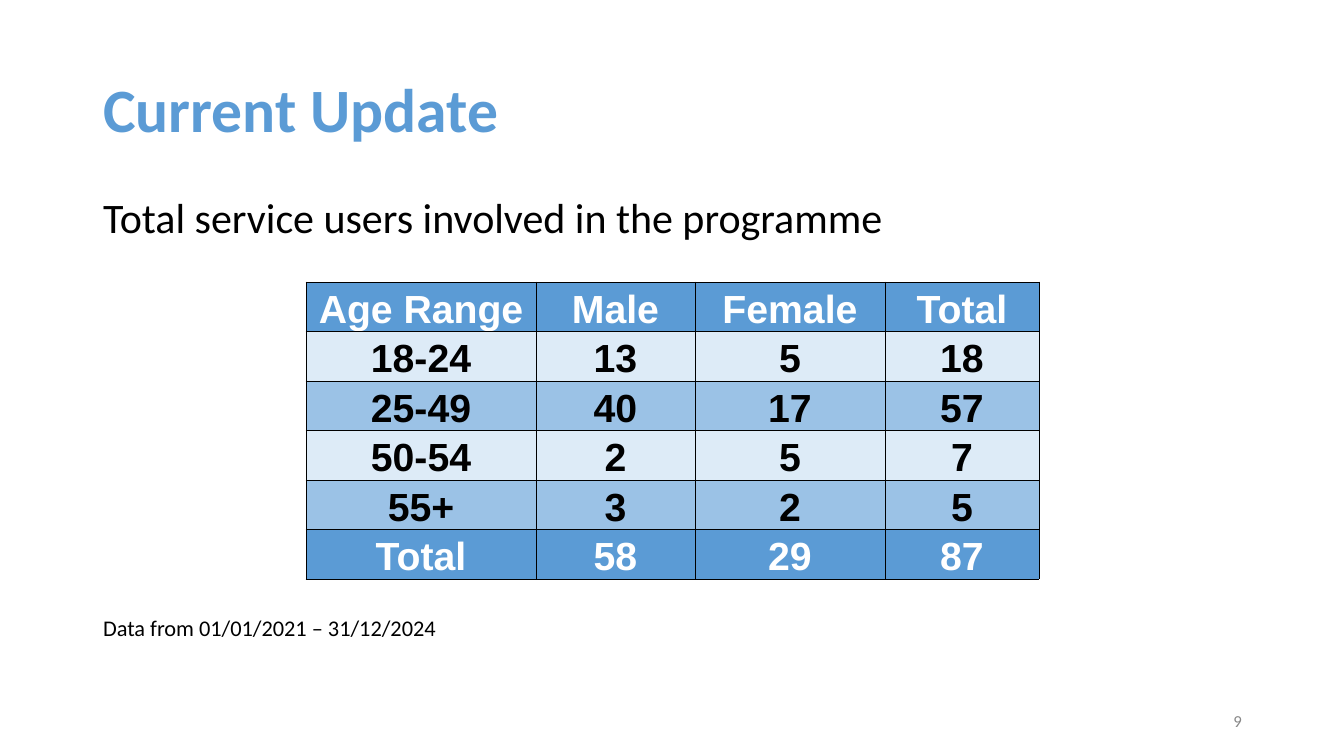
from lxml import etree
from pptx import Presentation
from pptx import util as u
from pptx.dml.color import RGBColor
from pptx.enum import text
from pptx.oxml import ns

PX = 12192000 / 1344
COLORS = {
    "blue": "5B9BD5",
    "mid": "9BC2E6",
    "pale": "DDEBF7",
    "black": "000000",
    "white": "FFFFFF",
    "grey": "888888",
}
AGE_ROWS = [
    ("Age Range", "Male", "Female", "Total"),
    ("18-24", "13", "5", "18"),
    ("25-49", "40", "17", "57"),
    ("50-54", "2", "5", "7"),
    ("55+", "3", "2", "5"),
    ("Total", "58", "29", "87"),
]
COLUMN_WIDTHS = [230, 159, 190, 154]
ROW_FILLS = ["blue", "pale", "mid", "pale", "mid", "blue"]


def px(length):
    return u.Emu(round(length * PX))


def apply(target, values):
    for key, value in values.items():
        setattr(target, key, value)


def place(box, left, top, width, height):
    apply(box, {"left": px(left), "top": px(top), "width": px(width), "height": px(height)})


def set_frame(frame, anchor):
    apply(frame, {
        "word_wrap": True,
        "auto_size": text.MSO_AUTO_SIZE.NONE,
        "vertical_anchor": anchor,
    })


def write(paragraph, words, size, color, font="Calibri", bold=False, **layout):
    run = paragraph.add_run()
    run.text = words
    apply(run.font, {"name": font, "size": u.Pt(size), "bold": bold})
    run.font.color.rgb = RGBColor.from_string(COLORS[color])
    apply(paragraph, layout)


def remove_bullet(paragraph):
    properties = paragraph._p.get_or_add_pPr()
    properties.set("marL", "0")
    properties.set("indent", "0")
    etree.SubElement(properties, ns.qn("a:buNone"))


def add_borders(cell, color, points):
    properties = cell._tc.get_or_add_tcPr()
    for side in ("lnL", "lnR", "lnT", "lnB"):
        line = etree.SubElement(properties, ns.qn(f"a:{side}"), w=str(u.Pt(points)))
        fill = etree.SubElement(line, ns.qn("a:solidFill"))
        etree.SubElement(fill, ns.qn("a:srgbClr"), val=COLORS[color])


def fill_cell(cell, words, fill):
    apply(cell, {
        "margin_left": px(1),
        "margin_right": px(1),
        "margin_top": px(1),
        "margin_bottom": 0,
        "vertical_anchor": text.MSO_ANCHOR.BOTTOM,
    })
    add_borders(cell, "black", 0.5)
    cell.fill.solid()
    cell.fill.fore_color.rgb = RGBColor.from_string(COLORS[fill])
    write(cell.text_frame.paragraphs[0], words, 28, "white" if fill == "blue" else "black",
          font="Arial", bold=True, alignment=text.PP_ALIGN.CENTER)


def add_age_table(slide):
    ages = slide.shapes.add_table(len(AGE_ROWS), len(COLUMN_WIDTHS), px(306), px(282),
                                  px(sum(COLUMN_WIDTHS)), px(297)).table
    apply(ages, {"first_row": False, "horz_banding": False})
    for column, width in zip(ages.columns, COLUMN_WIDTHS):
        column.width = px(width)
    for row, values, fill in zip(ages.rows, AGE_ROWS, ROW_FILLS):
        for cell, words in zip(row.cells, values):
            fill_cell(cell, words, fill)


def add_title(slide):
    title = slide.shapes.title
    place(title, 93, 40, 1159, 146)
    set_frame(title.text_frame, text.MSO_ANCHOR.MIDDLE)
    write(title.text_frame.paragraphs[0], "Current Update", 44, "blue", bold=True,
          line_spacing=0.9, alignment=text.PP_ALIGN.LEFT)


def add_body(slide):
    body = slide.placeholders[1]
    place(body, 93, 192, 1159, 480)
    frame = body.text_frame
    set_frame(frame, text.MSO_ANCHOR.TOP)
    intro, period = frame.paragraphs[0], frame.add_paragraph()
    write(intro, "Total service users involved in the programme", 30, "black",
          line_spacing=0.9, space_before=u.Pt(0))
    write(period, "Data from 01/01/2021 – 31/12/2024", 16, "black",
          line_spacing=0.9, space_before=u.Pt(268))
    for paragraph in (intro, period):
        remove_bullet(paragraph)


def add_page_number(slide):
    number = slide.shapes.add_textbox(px(950), px(701), px(302), px(40))
    set_frame(number.text_frame, text.MSO_ANCHOR.MIDDLE)
    write(number.text_frame.paragraphs[0], "9", 12, "grey", alignment=text.PP_ALIGN.RIGHT)


def main():
    deck = Presentation()
    apply(deck, {"slide_width": px(1344), "slide_height": px(756)})
    slide = deck.slides.add_slide(deck.slide_layouts[1])
    add_title(slide)
    add_body(slide)
    add_page_number(slide)
    add_age_table(slide)
    deck.save("out.pptx")


if __name__ == "__main__":
    main()
